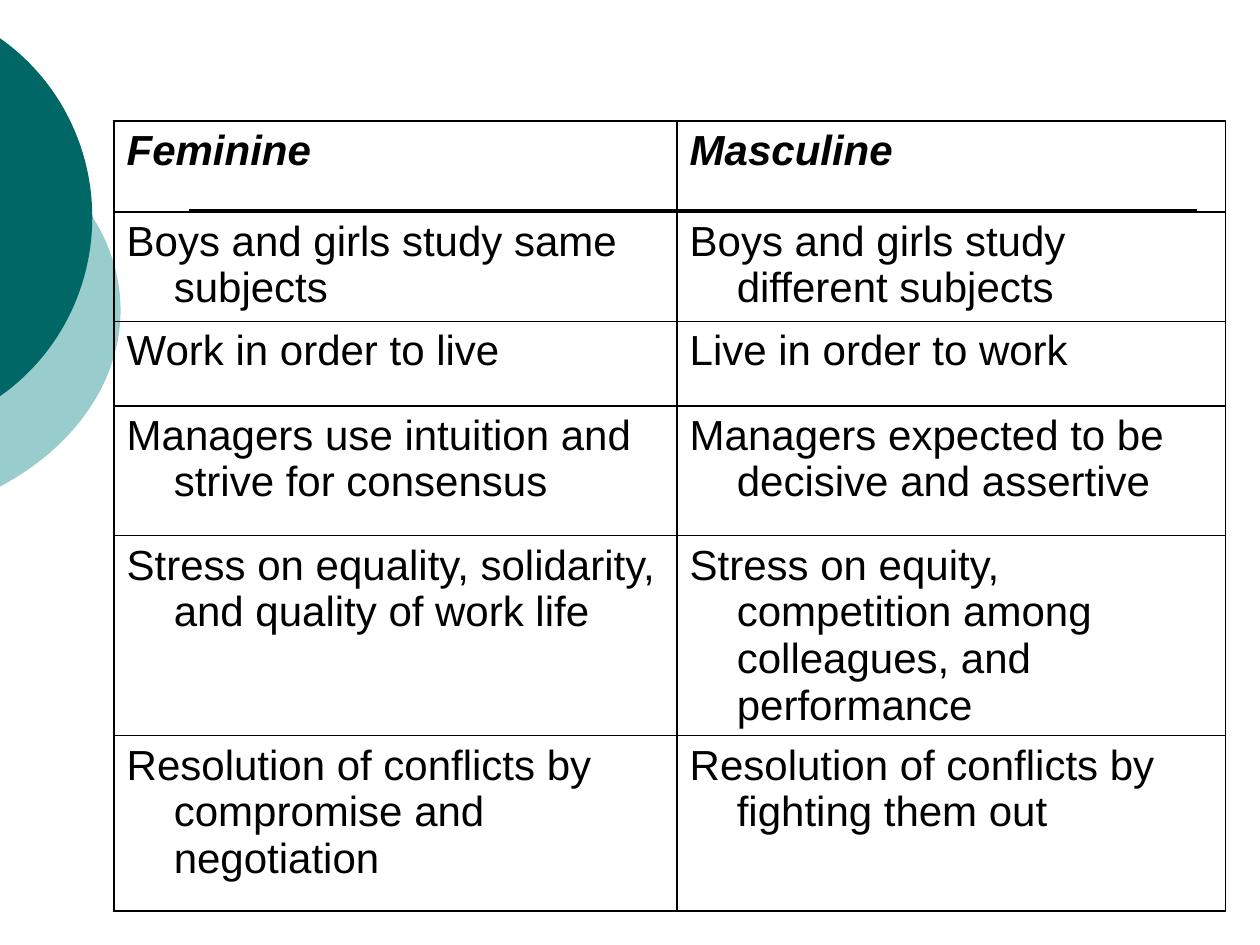
from dataclasses import dataclass

from lxml.etree import SubElement
from pptx import Presentation
from pptx.dml.color import RGBColor
from pptx.enum.shapes import MSO_CONNECTOR, MSO_SHAPE
from pptx.oxml.ns import qn
from pptx.util import Cm, Pt

INK = "000000"


@dataclass
class Disc:
    left: float
    top: float
    wide: float
    high: float
    fill: str


@dataclass
class Row:
    high: float
    left: str
    right: str


DISCS = [
    Disc(-9, 1.91, 11.43, 8.69, "99CCCC"),
    Disc(-6.73, 0, 8.59, 8.76, "006666"),
]
WIDTHS = [11.35, 11.05]
ROWS = [
    Row(1.83, "Feminine", "Masculine"),
    Row(2.21, "Boys and girls study same subjects",
        "Boys and girls study different subjects"),
    Row(1.7, "Work in order to live", "Live in order to work"),
    Row(2.62, "Managers use intuition and strive for consensus",
        "Managers expected to be decisive and assertive"),
    Row(3.63, "Stress on equality, solidarity, and quality of work life",
        "Stress on equity, competition among colleagues, and performance"),
    Row(3.53, "Resolution of conflicts by compromise and negotiation",
        "Resolution of conflicts by fighting them out"),
]


def color(code: str) -> RGBColor:
    return RGBColor.from_string(code)


def draw_disc(slide, disc: Disc) -> None:
    shape = slide.shapes.add_shape(
        MSO_SHAPE.OVAL, Cm(disc.left), Cm(disc.top),
        Cm(disc.wide), Cm(disc.high))
    shape.shadow.inherit = False
    shape.fill.solid()
    shape.fill.fore_color.rgb = color(disc.fill)
    shape.line.fill.background()


def draw_rule(slide, left: float, right: float, top: float) -> None:
    rule = slide.shapes.add_connector(
        MSO_CONNECTOR.STRAIGHT, Cm(left), Cm(top), Cm(right), Cm(top))
    rule.line.color.rgb = color(INK)
    rule.line.width = Pt(1)
    SubElement(rule._element.spPr, qn("a:effectLst"))


def add_edges(cell) -> None:
    props = cell._tc.get_or_add_tcPr()
    for side in ("lnL", "lnR", "lnT", "lnB"):
        edge = SubElement(props, qn(f"a:{side}"), w=str(Pt(1)))
        fill = SubElement(edge, qn("a:solidFill"))
        SubElement(fill, qn("a:srgbClr"), val=INK)


def fill_cell(cell, text: str, head: bool) -> None:
    add_edges(cell)
    cell.fill.background()
    cell.text_frame.text = text
    para = cell.text_frame.paragraphs[0]
    # Hanging indent
    props = para._p.get_or_add_pPr()
    props.set("marL", str(Cm(0.95)))
    props.set("indent", str(-Cm(0.95)))
    font = para.runs[0].font
    font.name = "Arial"
    font.size = Pt(24)
    font.bold = font.italic = head
    font.color.rgb = color(INK)


def draw_table(slide, left: float, top: float) -> None:
    high = sum(row.high for row in ROWS)
    table = slide.shapes.add_table(
        len(ROWS), len(WIDTHS), Cm(left), Cm(top),
        Cm(sum(WIDTHS)), Cm(high)).table
    table.first_row = table.horz_banding = False
    for col, wide in zip(table.columns, WIDTHS):
        col.width = Cm(wide)
    for i, row in enumerate(ROWS):
        table.rows[i].height = Cm(row.high)
        for j, text in enumerate((row.left, row.right)):
            fill_cell(table.cell(i, j), text, head=i == 0)


def main() -> None:
    deck = Presentation()
    deck.slide_width, deck.slide_height = Cm(25.4), Cm(19.05)
    slide = deck.slides.add_slide(deck.slide_layouts[6])

    # Backdrop
    for disc in DISCS:
        draw_disc(slide, disc)
    draw_rule(slide, 3.81, 24.13, 4.24)

    # Comparison
    draw_table(slide, 2.3, 2.44)

    deck.save("out.pptx")


if __name__ == "__main__":
    main()
